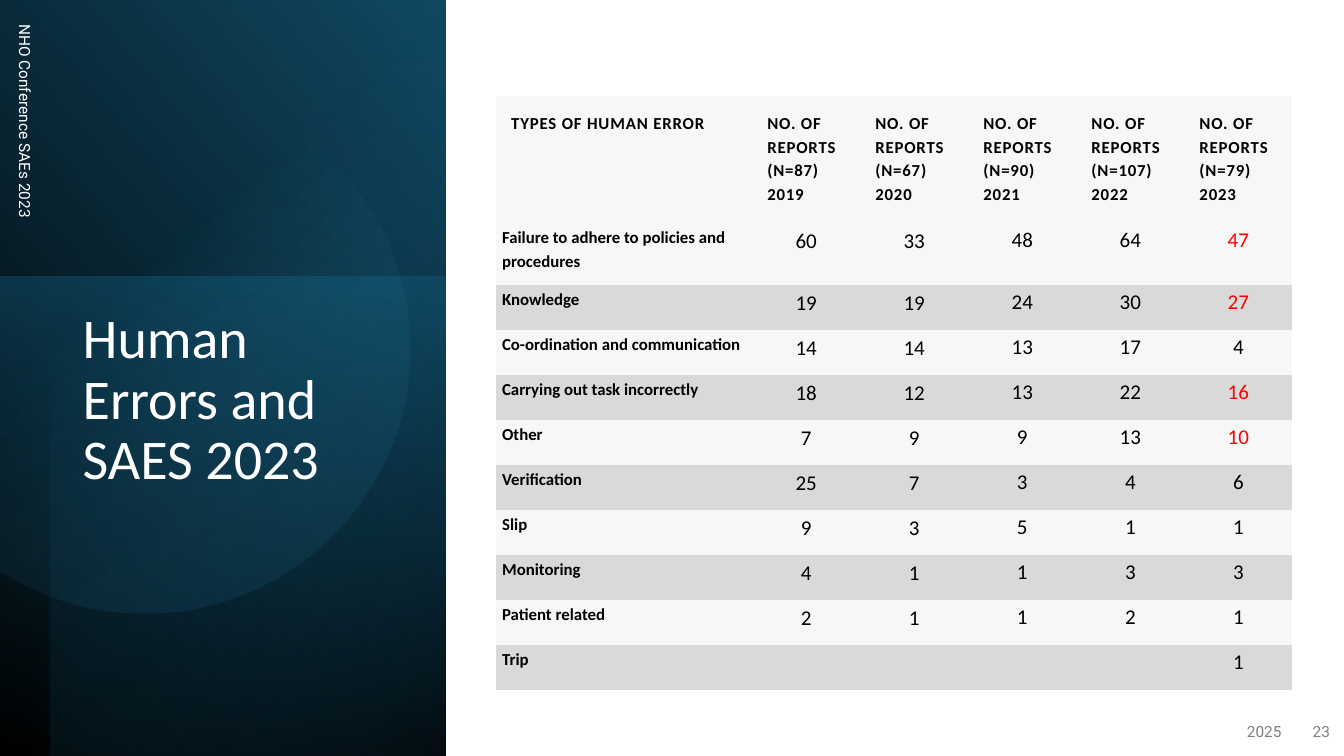
from math import cos, radians, sin

from pptx import Presentation
from pptx.dml.color import RGBColor
from pptx.enum.shapes import MSO_SHAPE
from pptx.enum.text import MSO_ANCHOR, MSO_AUTO_SIZE, PP_ALIGN
from pptx.oxml import parse_xml
from pptx.oxml.ns import nsdecls, qn
from pptx.util import Inches, Pt

NO_STYLE = "{2D5ABB26-0587-4C30-8999-92F81FD0307C}"
WHITE, GREY, BLACK, RED = "FFFFFF", "808080", "000000", "FF0000"
LIGHT_ROW, DARK_ROW = "F7F7F7", "D9D9D9"

YEARS = [(87, 2019), (67, 2020), (90, 2021), (107, 2022), (79, 2023)]
ERRORS = [
    ("Failure to adhere to policies and procedures", 60, 33, 48, 64, 47),
    ("Knowledge", 19, 19, 24, 30, 27),
    ("Co-ordination and communication", 14, 14, 13, 17, 4),
    ("Carrying out task incorrectly", 18, 12, 13, 22, 16),
    ("Other", 7, 9, 9, 13, 10),
    ("Verification", 25, 7, 3, 4, 6),
    ("Slip", 9, 3, 5, 1, 1),
    ("Monitoring", 4, 1, 1, 3, 3),
    ("Patient related", 2, 1, 1, 2, 1),
    ("Trip", "", "", "", "", 1),
]
HIGHLIGHT_FROM = 10


def color(value):
    return RGBColor.from_string(value)


def write_text(frame, text, size=12, font="Calibri", fill=BLACK, bold=False,
               align=PP_ALIGN.LEFT, line_spacing=None, space_after=None, tracking=None):
    paragraph = frame.paragraphs[0]
    paragraph.alignment = align
    if line_spacing:
        paragraph.line_spacing = line_spacing
    if space_after:
        paragraph.space_after = Pt(space_after)
    run = paragraph.add_run()
    run.text = text
    run.font.size = Pt(size)
    run.font.name = font
    run.font.bold = bold
    run.font.color.rgb = color(fill)
    if tracking:
        run._r.get_or_add_rPr().set("spc", str(round(tracking * 100)))


def style_gradient(shape, stops, angle, rotation, flip=False):
    shape.shadow.inherit = False
    shape.line.fill.background()
    shape.fill.background()
    shape.rotation = rotation
    properties = shape._element.spPr
    if flip:
        properties.find(qn("a:xfrm")).set("flipH", "1")
    stop_xml = "".join(
        f'<a:gs pos="{position * 1000}"><a:srgbClr val="{value}">'
        f'<a:alpha val="{alpha * 1000}"/></a:srgbClr></a:gs>'
        for position, value, alpha in stops
    )
    gradient = parse_xml(
        f'<a:gradFill rotWithShape="1" {nsdecls("a")}><a:gsLst>{stop_xml}</a:gsLst>'
        f'<a:lin ang="{angle * 60000}" scaled="0"/></a:gradFill>'
    )
    properties.replace(properties.find(qn("a:noFill")), gradient)


def add_panel(slide, left, top, width, height, **gradient):
    panel = slide.shapes.add_shape(
        MSO_SHAPE.RECTANGLE, Inches(left), Inches(top), Inches(width), Inches(height))
    style_gradient(panel, **gradient)


def add_cut_circle(slide, center_x, center_y, radius, half_arc, rotation, **gradient):
    points = []
    for degrees in range(-half_arc, half_arc + 1, 3):
        angle = radians(degrees - rotation)
        points.append((Inches(center_x + radius * cos(angle)),
                       Inches(center_y + radius * sin(angle))))
    builder = slide.shapes.build_freeform(*points[0])
    builder.add_line_segments(points[1:], close=True)
    style_gradient(builder.convert_to_shape(), rotation=rotation, **gradient)


def add_caption(slide, text, left, top, width, rotation=0, **text_format):
    box = slide.shapes.add_textbox(Inches(left), Inches(top), Inches(width), Inches(0.4))
    box.rotation = rotation
    box.text_frame.word_wrap = True
    box.text_frame.vertical_anchor = MSO_ANCHOR.MIDDLE
    write_text(box.text_frame, text, size=11, font="Roboto", space_after=6, **text_format)


def place_title(slide, text):
    title = slide.shapes.title
    title.left, title.top = Inches(0.72), Inches(3.03)
    title.width, title.height = Inches(3.15), Inches(3.36)
    frame = title.text_frame
    frame.word_wrap = True
    frame.auto_size = MSO_AUTO_SIZE.NONE
    frame.vertical_anchor = MSO_ANCHOR.TOP
    write_text(frame, text, size=40, fill=WHITE, line_spacing=0.9)
    slide.shapes._spTree.append(title._element)


def fill_cell(cell, text, background, margins, **text_format):
    cell.fill.solid()
    cell.fill.fore_color.rgb = color(background)
    cell.margin_left, cell.margin_top, cell.margin_right, cell.margin_bottom = map(Inches, margins)
    if text:
        write_text(cell.text_frame, text, line_spacing=1.15, **text_format)


def add_error_table(slide, left, top, width, height):
    label_width, header_height, first_height = 2.54, 1.27, 0.61
    table = slide.shapes.add_table(
        len(ERRORS) + 1, len(YEARS) + 1,
        Inches(left), Inches(top), Inches(width), Inches(height)).table
    table.first_row = table.horz_banding = False
    table._tbl.tblPr.find(qn("a:tableStyleId")).text = NO_STYLE

    year_width = (width - label_width) / len(YEARS)
    row_height = (height - header_height - first_height) / (len(ERRORS) - 1)
    for index, column in enumerate(table.columns):
        column.width = Inches(year_width if index else label_width)
    for index, row in enumerate(table.rows):
        row.height = Inches({0: header_height, 1: first_height}.get(index, row_height))

    headers = ["TYPES OF HUMAN ERROR"]
    headers += [f"NO. OF REPORTS (N={count}) {year}" for count, year in YEARS]
    for index, header in enumerate(headers):
        fill_cell(table.cell(0, index), header, LIGHT_ROW, [0.15] * 4, bold=True, tracking=0.6)

    for row_index, (label, *counts) in enumerate(ERRORS, 1):
        background = LIGHT_ROW if row_index % 2 else DARK_ROW
        fill_cell(table.cell(row_index, 0), label, background,
                  (0.06, 0.01, 0.06, 0.1), bold=True)
        for column_index, count in enumerate(counts, 1):
            margins = (0.06, 0.01, 0.06, 0.1) if column_index < 3 else (0, 0, 0, 0.1)
            highlighted = column_index == len(YEARS) and count >= HIGHLIGHT_FROM
            fill_cell(table.cell(row_index, column_index), str(count), background, margins,
                      size=15, align=PP_ALIGN.CENTER, fill=RED if highlighted else BLACK)


def main():
    presentation = Presentation()
    presentation.slide_width, presentation.slide_height = Inches(13.33), Inches(7.5)
    slide = presentation.slides.add_slide(presentation.slide_layouts[5])

    add_panel(slide, -1.55, 1.55, 7.52, 4.42, rotation=90, flip=True, angle=310,
              stops=[(0, BLACK, 100), (100, "104862", 100)])
    add_panel(slide, -0.17, 2.91, 4.76, 4.42, rotation=270, angle=190,
              stops=[(0, "156082", 50), (100, "0B3041", 0)])
    add_panel(slide, -1.29, 1.79, 7.5, 3.92, rotation=270, flip=True, angle=220,
              stops=[(0, BLACK, 59), (69, "156082", 0)])
    add_cut_circle(slide, 1.81, 3.93, 2.63, half_arc=123, rotation=101.6, angle=310,
                   stops=[(39, "46B1E1", 0), (100, "104862", 26)])

    place_title(slide, "Human Errors and SAES 2023")
    add_caption(slide, "NHO Conference SAEs 2023", -2, 2.19, 4.5, rotation=90, fill=WHITE)
    add_caption(slide, "2025", 9.81, 7.06, 3, fill=GREY, align=PP_ALIGN.RIGHT)
    add_caption(slide, "23", 12.8, 7.06, 0.49, fill=GREY, align=PP_ALIGN.RIGHT)
    add_error_table(slide, 4.92, 0.95, 7.9, 5.9)
    presentation.save("out.pptx")


if __name__ == "__main__":
    main()
